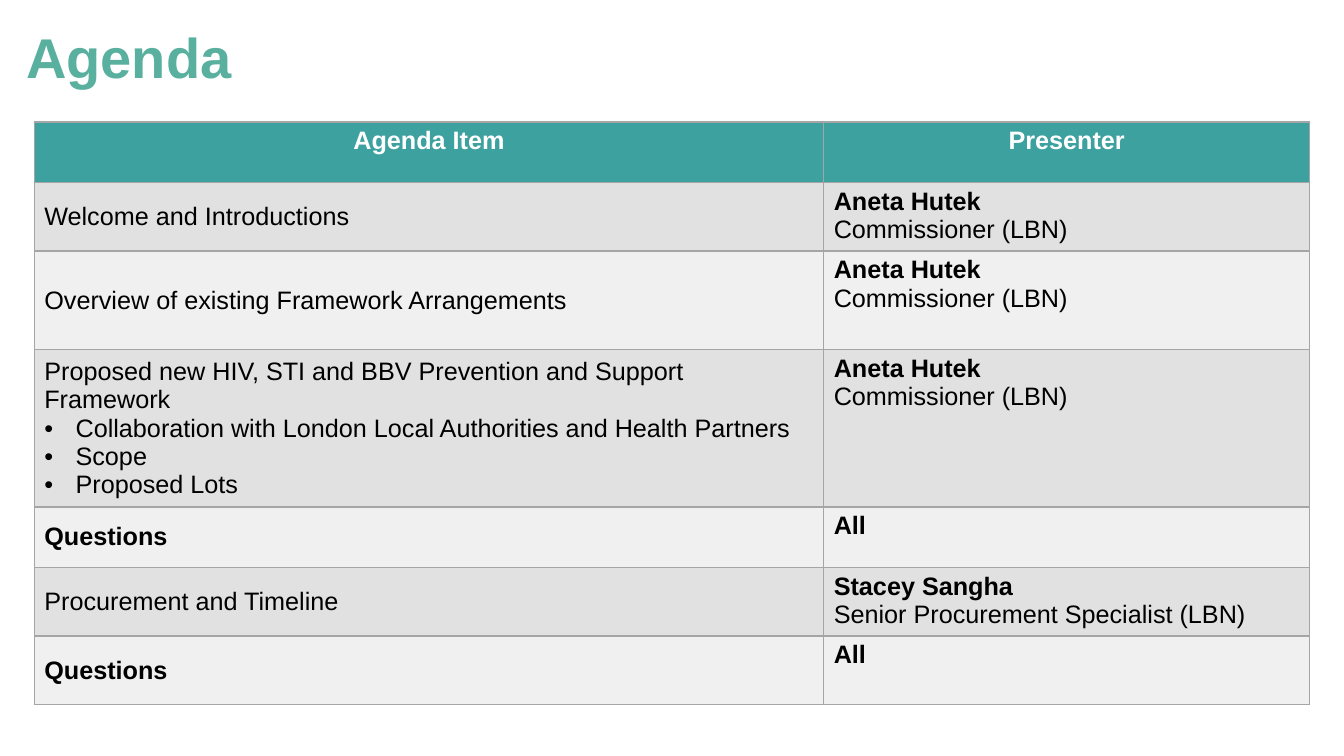
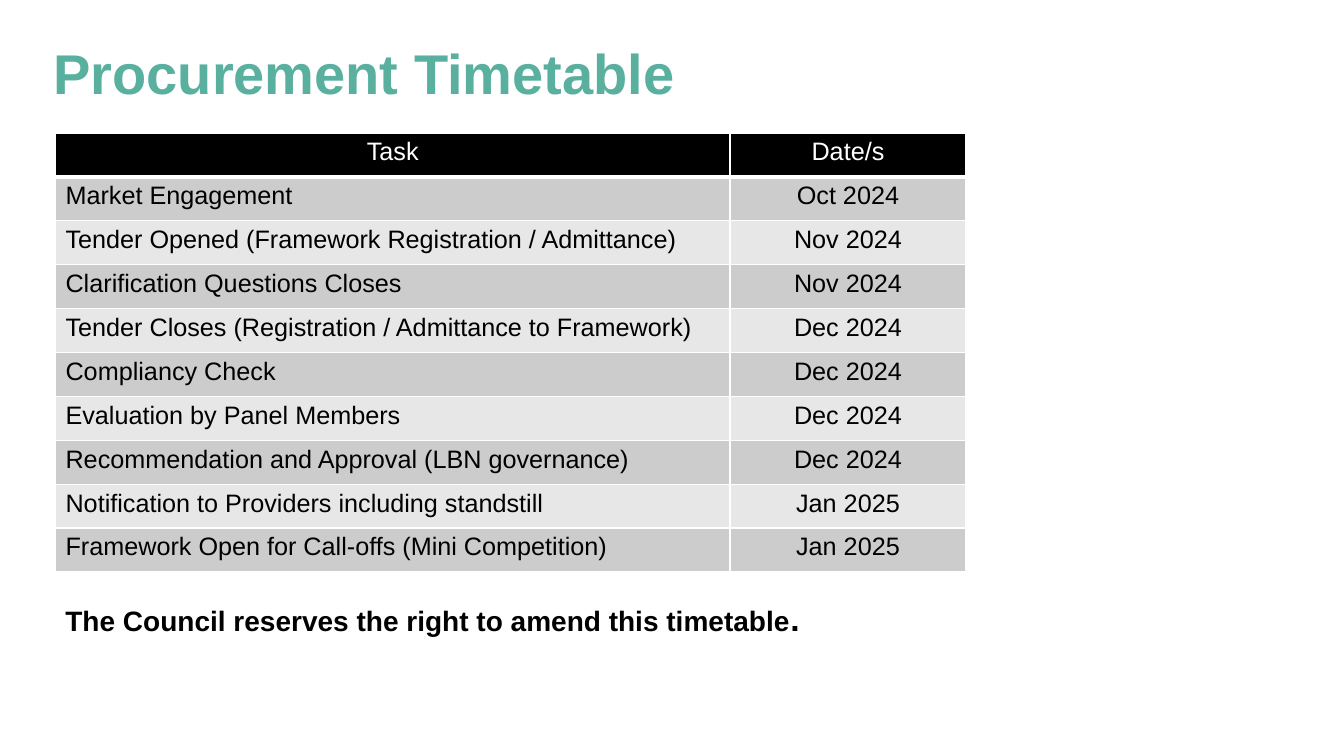
from dataclasses import dataclass

from lxml import etree
from pptx import Presentation
from pptx import util as u
from pptx.dml.color import RGBColor
from pptx.enum import text
from pptx.oxml.ns import qn

SLIDE_W, SLIDE_H = u.Inches(13.33), u.Inches(7.5)
FONT = "Arial"
BODY_SIZE = 18
TITLE_GREEN = RGBColor(0x59, 0xB0, 0x9F)
TEAL = RGBColor(0x3D, 0xA1, 0xA0)
BLACK = RGBColor(0x00, 0x00, 0x00)
WHITE = RGBColor(0xFF, 0xFF, 0xFF)
RULE_GREY = RGBColor(0xA5, 0xA5, 0xA5)
AGENDA_BANDS = RGBColor(0xE1, 0xE1, 0xE1), RGBColor(0xF0, 0xF0, 0xF0)
TASK_BANDS = RGBColor(0xCC, 0xCC, 0xCC), RGBColor(0xE7, 0xE7, 0xE7)
LEFT, CENTER = text.PP_ALIGN.LEFT, text.PP_ALIGN.CENTER
TOP, MIDDLE, BOTTOM = (text.MSO_ANCHOR.TOP, text.MSO_ANCHOR.MIDDLE,
                       text.MSO_ANCHOR.BOTTOM)


@dataclass
class Line:
    words: str
    bold: bool = False
    bullet: bool = False


@dataclass
class TableStyle:
    header_fill: RGBColor
    header_bold: bool
    bands: tuple
    rule: RGBColor
    header_rule: float
    aligns: tuple
    anchors: tuple


AGENDA_STYLE = TableStyle(TEAL, True, AGENDA_BANDS, RULE_GREY, 1,
                          (LEFT, LEFT), (MIDDLE, TOP))
TIMETABLE_STYLE = TableStyle(BLACK, False, TASK_BANDS, WHITE, 3,
                             (LEFT, CENTER), (TOP, TOP))

COMMISSIONER = [Line("Aneta Hutek", bold=True), Line("Commissioner (LBN)")]
QUESTIONS = [Line("Questions", bold=True)], [Line("All", bold=True)]
AGENDA = [
    ([Line("Welcome and Introductions")], COMMISSIONER),
    ([Line("Overview of existing Framework Arrangements")], COMMISSIONER),
    ([Line("Proposed new HIV, STI and BBV Prevention and Support Framework"),
      Line("Collaboration with London Local Authorities and Health Partners",
           bullet=True),
      Line("Scope", bullet=True),
      Line("Proposed Lots", bullet=True)], COMMISSIONER),
    QUESTIONS,
    ([Line("Procurement and Timeline")],
     [Line("Stacey Sangha", bold=True),
      Line("Senior Procurement Specialist (LBN)")]),
    QUESTIONS,
]
TIMETABLE = [
    ("Market Engagement", "Oct 2024"),
    ("Tender Opened (Framework Registration / Admittance)", "Nov 2024"),
    ("Clarification Questions Closes", "Nov 2024"),
    ("Tender Closes (Registration / Admittance to Framework)", "Dec 2024"),
    ("Compliancy Check", "Dec 2024"),
    ("Evaluation by Panel Members", "Dec 2024"),
    ("Recommendation and Approval (LBN governance)", "Dec 2024"),
    ("Notification to Providers including standstill", "Jan 2025"),
    ("Framework Open for Call-offs (Mini Competition)", "Jan 2025"),
]


def across(percent):
    return round(SLIDE_W * percent / 100)


def down(percent):
    return round(SLIDE_H * percent / 100)


def add_run(paragraph, words, size, color, bold=False):
    run = paragraph.add_run()
    run.text = words
    run.font.name = FONT
    run.font.size = u.Pt(size)
    run.font.bold = bold
    run.font.color.rgb = color


def add_bullet(paragraph):
    props = paragraph._p.get_or_add_pPr()
    indent = u.Inches(0.31)
    props.set("marL", str(indent))
    props.set("indent", str(-indent))
    etree.SubElement(props, qn("a:buFont")).set("typeface", FONT)
    etree.SubElement(props, qn("a:buChar")).set("char", "•")


def set_borders(cell, color, bottom):
    """Rule all four sides; must run before the cell gets its fill."""
    props = cell._tc.get_or_add_tcPr()
    for side, width in (("L", 1), ("R", 1), ("T", 1), ("B", bottom)):
        border = etree.SubElement(props, qn(f"a:ln{side}"), w=str(u.Pt(width)))
        solid = etree.SubElement(border, qn("a:solidFill"))
        etree.SubElement(solid, qn("a:srgbClr"), val=str(color))


def fill_cell(cell, lines, fill, color, align, anchor, rule, bottom=1):
    set_borders(cell, rule, bottom)
    cell.fill.solid()
    cell.fill.fore_color.rgb = fill
    cell.vertical_anchor = anchor
    frame = cell.text_frame
    for number, line in enumerate(lines):
        paragraph = frame.add_paragraph() if number else frame.paragraphs[0]
        if line.bullet:
            add_bullet(paragraph)
        paragraph.alignment = align
        add_run(paragraph, line.words, BODY_SIZE, color, line.bold)


def add_banded_table(slide, left, top, widths, heights, headings, body, style):
    """Lay out a table whose place and sizes are percentages of the slide."""
    table = slide.shapes.add_table(
        len(heights), len(widths), across(left), down(top),
        across(sum(widths)), down(sum(heights))).table
    for column, width in zip(table.columns, widths):
        column.width = across(width)
    for row, height in zip(table.rows, heights):
        row.height = down(height)
    for col, heading in enumerate(headings):
        fill_cell(table.cell(0, col), [Line(heading, style.header_bold)],
                  style.header_fill, WHITE, CENTER, TOP, style.rule,
                  style.header_rule)
    for row, entries in enumerate(body, start=1):
        band = style.bands[(row - 1) % 2]
        for col, lines in enumerate(entries):
            fill_cell(table.cell(row, col), lines, band, BLACK,
                      style.aligns[col], style.anchors[col], style.rule)


def add_titled_slide(deck, words, left, top):
    slide = deck.slides.add_slide(deck.slide_layouts[5])
    title = slide.shapes.title
    title.left, title.top = across(left), down(top)
    title.width, title.height = across(75), down(10.8)
    frame = title.text_frame
    frame.auto_size = text.MSO_AUTO_SIZE.NONE
    frame.vertical_anchor = BOTTOM
    paragraph = frame.paragraphs[0]
    paragraph.alignment = LEFT
    paragraph.line_spacing = 0.9
    add_run(paragraph, words, 40, TITLE_GREEN, bold=True)
    return slide


def add_caveat(slide, left, top):
    frame = slide.shapes.add_textbox(across(left), down(top), across(75.84),
                                     down(6.67)).text_frame
    frame.word_wrap = True
    paragraph = frame.paragraphs[0]
    add_run(paragraph, "The Council reserves the right to amend this timetable",
            20, BLACK, bold=True)
    add_run(paragraph, ".", 24, BLACK, bold=True)


def add_agenda(deck):
    slide = add_titled_slide(deck, "Agenda", 1.2, 1.87)
    add_banded_table(slide, 2.55, 16.13, (58.74, 36.16),
                     (8, 9.07, 13.07, 20.8, 8, 9.07, 9.07),
                     ("Agenda Item", "Presenter"), AGENDA, AGENDA_STYLE)


def add_timetable(deck):
    slide = add_titled_slide(deck, "Procurement Timetable", 3.23, 4)
    body = [[[Line(words)] for words in entry] for entry in TIMETABLE]
    add_banded_table(slide, 4.13, 17.6, (50.19, 17.55),
                     [5.81] * (len(body) + 1), ("Task", "Date/s"), body,
                     TIMETABLE_STYLE)
    add_caveat(slide, 4.13, 78.4)


def main():
    deck = Presentation()
    deck.slide_width, deck.slide_height = SLIDE_W, SLIDE_H
    add_agenda(deck)
    add_timetable(deck)
    deck.save("out.pptx")


if __name__ == "__main__":
    main()
